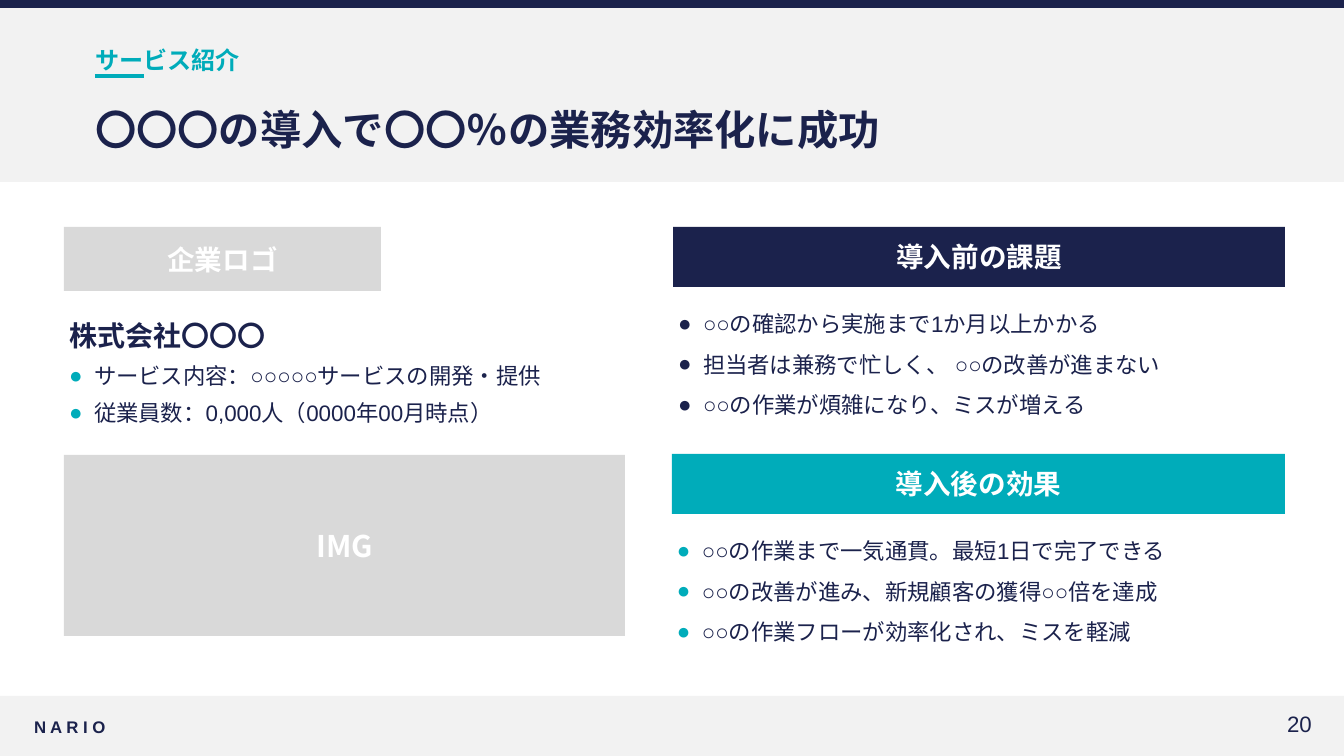
from lxml import etree
from pptx import Presentation, util as u
from pptx.dml.color import RGBColor
from pptx.enum import shapes, text
from pptx.oxml.ns import qn

SCALE = 12192000 / 1344
COLORS = {"navy": "1B224C", "teal": "00ACBA", "band": "F2F2F2",
          "grey": "D9D9D9", "white": "FFFFFF"}
NOTO, ARIAL = "Noto Sans CJK JP", "Arial"
LEFT, CENTER, RIGHT = text.PP_ALIGN.LEFT, text.PP_ALIGN.CENTER, text.PP_ALIGN.RIGHT
TOP, MIDDLE = text.MSO_ANCHOR.TOP, text.MSO_ANCHOR.MIDDLE


def px(n):
    return u.Emu(round(n * SCALE))


def rgb(name):
    return RGBColor.from_string(COLORS[name])


def apply(obj, values):
    for name, value in values.items():
        setattr(obj, name, value)


def set_frame(tf, inset, anchor=TOP, wrap=True):
    apply(tf, {"word_wrap": wrap, "auto_size": text.MSO_AUTO_SIZE.NONE,
               "vertical_anchor": anchor})
    for side in ("left", "top", "right", "bottom"):
        setattr(tf, f"margin_{side}", px(inset))


def write(p, words, size, color="navy", font=ARIAL, bold=False, **spacing):
    apply(p, {"alignment": LEFT, "space_before": u.Pt(0), **spacing})
    r = p.add_run()
    r.text = words
    apply(r.font, {"size": u.Pt(size), "name": font, "bold": bold})
    r.font.color.rgb = rgb(color)
    ea = etree.SubElement(r.font._element, qn("a:ea"))
    ea.set("typeface", font)


def add_bullet(p, color):
    pPr = p._p.get_or_add_pPr()
    pPr.set("marL", str(px(25)))
    pPr.set("indent", str(-px(25)))
    clr = etree.SubElement(pPr, qn("a:buClr"))
    etree.SubElement(clr, qn("a:srgbClr")).set("val", COLORS[color])
    etree.SubElement(pPr, qn("a:buFont")).set("typeface", ARIAL)
    etree.SubElement(pPr, qn("a:buChar")).set("char", "●")


def add_box(s, box, fill, label=None, size=19.7, inset=5):
    sp = s.shapes.add_shape(shapes.MSO_SHAPE.RECTANGLE, *map(px, box))
    sp.shadow.inherit = False
    sp.fill.solid()
    sp.fill.fore_color.rgb = rgb(fill)
    sp.line.fill.background()
    if label:
        set_frame(sp.text_frame, inset, MIDDLE)
        write(sp.text_frame.paragraphs[0], label, size, "white", NOTO, True,
              alignment=CENTER)


def add_label(s, box, words, size, anchor=MIDDLE, wrap=False, **fmt):
    tf = s.shapes.add_textbox(*map(px, box)).text_frame
    set_frame(tf, 4, anchor, wrap)
    write(tf.paragraphs[0], words, size, **fmt)


def add_list(s, box, items, bullet, heading=None, **spacing):
    tf = s.shapes.add_textbox(*map(px, box)).text_frame
    set_frame(tf, 5)
    p = tf.paragraphs[0]
    if heading:
        write(p, heading, 20, bold=True, **{**spacing, "line_spacing": 1.4})
    for i, item in enumerate(items):
        if i or heading:
            p = tf.add_paragraph()
        write(p, item, 16, **spacing)
        add_bullet(p, bullet)


def add_underline(s, x1, x2, y):
    ln = s.shapes.add_connector(shapes.MSO_CONNECTOR.STRAIGHT,
                                *map(px, (x1, y, x2, y)))
    ln.line.color.rgb = rgb("teal")
    ln.line.width = u.Pt(2.5)
    etree.SubElement(ln._element.spPr, qn("a:effectLst"))


def add_title(s, box, words):
    title = s.shapes.title
    apply(title, dict(zip(("left", "top", "width", "height"), map(px, box))))
    set_frame(title.text_frame, 4, MIDDLE)
    write(title.text_frame.paragraphs[0], words, 29.5, font=NOTO, bold=True)
    s.shapes._spTree.append(title._element)


def add_case(s, left, top, heading, color, items):
    width = 1285 - left
    add_box(s, (left, top, width, 60), color, heading, inset=10)
    add_list(s, (left, top + 65, width, 134), items, color, line_spacing=1.5)


def main():
    prs = Presentation()
    prs.slide_width, prs.slide_height = px(1344), px(756)
    s = prs.slides.add_slide(prs.slide_layouts[5])

    add_box(s, (0, 696, 1344, 60), "band")
    add_box(s, (0, 0, 1344, 182), "band")
    add_underline(s, 95, 144, 76)
    add_box(s, (0, 0, 1344, 8), "navy")
    add_label(s, (1184, 711, 132, 31), "20", 15.9, alignment=RIGHT,
              line_spacing=0.8)
    add_label(s, (91, 41, 1162, 28), "サービス紹介", 17.2, TOP, True,
              color="teal", font=NOTO, bold=True)
    add_title(s, (91, 99, 1162, 59), "〇〇〇の導入で〇〇％の業務効率化に成功")

    add_case(s, 673, 227, "導入前の課題", "navy", [
        "○○の確認から実施まで1か月以上かかる",
        "担当者は兼務で忙しく、 ○○の改善が進まない",
        "○○の作業が煩雑になり、ミスが増える"])
    add_case(s, 672, 454, "導入後の効果", "teal", [
        "○○の作業まで一気通貫。最短1日で完了できる",
        "○○の改善が進み、新規顧客の獲得○○倍を達成",
        "○○の作業フローが効率化され、ミスを軽減"])

    add_box(s, (64, 227, 317, 64), "grey", "企業ロゴ")
    add_box(s, (64, 455, 561, 181), "grey", "IMG", 21.3)
    add_list(s, (64, 300, 608, 132), [
        "サービス内容：○○○○○サービスの開発・提供",
        "従業員数：0,000人（0000年00月時点）"],
        "teal", "株式会社〇〇〇", space_after=u.Pt(7.4))
    add_label(s, (30, 711, 108, 31), "N A R I O", 12, bold=True)

    prs.save("out.pptx")


if __name__ == "__main__":
    main()
